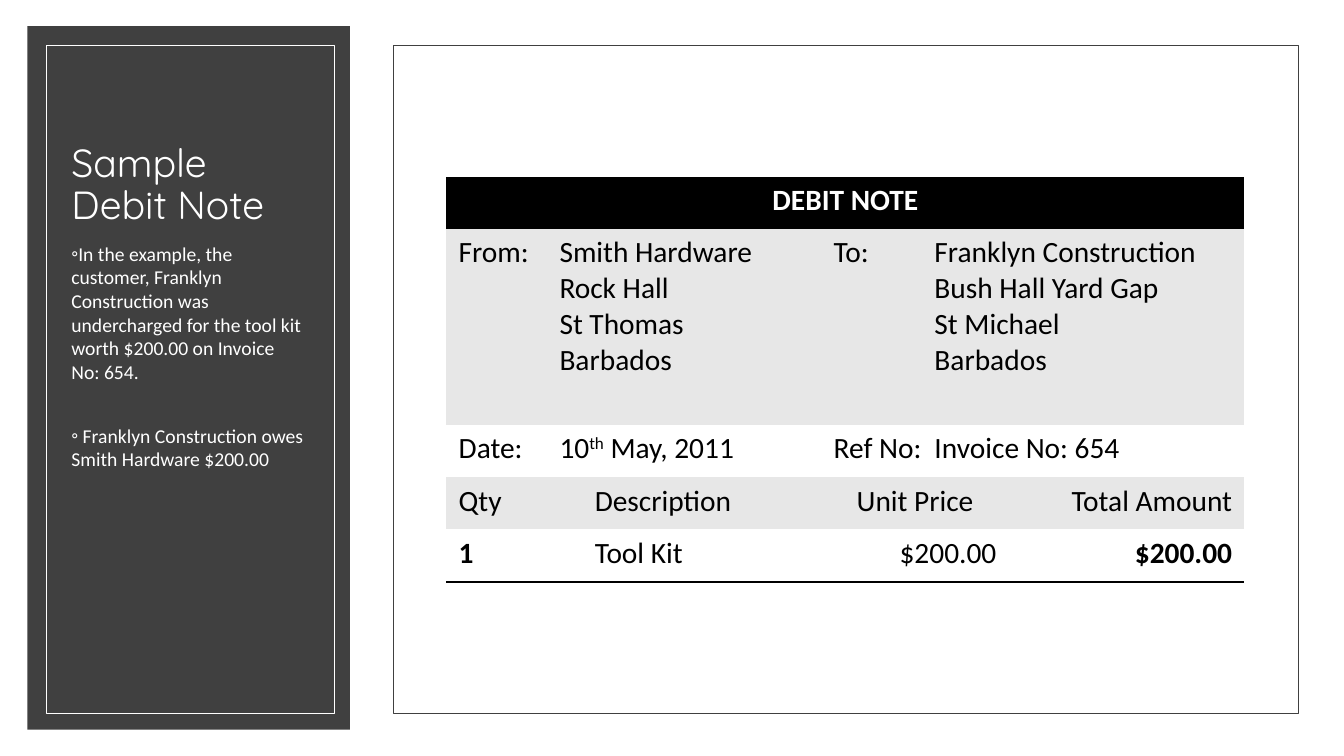
"""Build the sample debit note slide with its explanatory side panel."""
from dataclasses import dataclass

from lxml import etree
from pptx import Presentation
from pptx.dml.color import RGBColor
from pptx.enum.shapes import MSO_SHAPE
from pptx.enum.text import MSO_ANCHOR, PP_ALIGN
from pptx.oxml.ns import qn
from pptx.util import Cm, Pt

RECTANGLE = MSO_SHAPE.RECTANGLE
TOP, BOTTOM = MSO_ANCHOR.TOP, MSO_ANCHOR.BOTTOM
LEFT, CENTER, RIGHT = PP_ALIGN.LEFT, PP_ALIGN.CENTER, PP_ALIGN.RIGHT


@dataclass(frozen=True)
class Theme:
    """Colours, fonts and type sizes."""
    white: str = "FFFFFF"
    black: str = "000000"
    panel: str = "404040"
    band: str = "E7E7E7"
    title_font: str = "Quicksand"
    body_font: str = "Calibri"
    title_size: float = 28
    note_size: float = 14
    table_size: float = 21
    frame_width: float = 0.5
    rule_width: float = 2


THEME = Theme()
PLAIN_TABLE_STYLE = "{2D5ABB26-0587-4C30-8999-92F81FD0307C}"

TITLE = "Sample Debit Note"
NOTES = [
    "In the example, the customer, Franklyn Construction was undercharged "
    "for the tool kit worth $200.00 on Invoice No: 654.",
    " Franklyn Construction owes Smith Hardware $200.00",
]
COLUMN_WIDTHS = [3.43, 6.02, 4.72, 5.94]
ROW_HEIGHTS = [1.32, 4.93, 1.32, 1.32, 1.32]

# Each cell: columns spanned, alignment, bold, paragraphs of (text, style) runs.
DEBIT_NOTE = [
    [(4, CENTER, True, ["DEBIT NOTE"])],
    [(2, LEFT, False, ["From:\tSmith Hardware", "\tRock Hall", "\tSt Thomas", "\tBarbados"]),
     (2, LEFT, False, ["To:\tFranklyn Construction", "\tBush Hall Yard Gap", "\tSt Michael",
                       "\tBarbados"])],
    [(2, LEFT, False, ["Date:\t10^th^ May, 2011"]),
     (2, LEFT, False, ["Ref No:\tInvoice No: 654"])],
    [(1, LEFT, False, ["Qty"]), (1, LEFT, False, ["Description"]),
     (1, CENTER, False, ["Unit Price"]), (1, RIGHT, False, ["Total Amount"])],
    [(1, LEFT, True, ["1"]), (1, LEFT, False, ["Tool Kit"]),
     (1, RIGHT, False, ["$200.00"]), (1, RIGHT, True, ["$200.00"])],
]
ROW_FILLS = [THEME.black, THEME.band, THEME.white, THEME.band, THEME.white]

RECTANGLES = [
    ((0.69, 0.66, 8.13, 17.73), THEME.panel, None),
    ((1.17, 1.14, 7.26, 16.84), None, THEME.white),
    ((9.91, 1.14, 22.81, 16.84), None, THEME.panel),
]


def color(value):
    return RGBColor.from_string(value)


def add_rectangle(slide, box, fill, line):
    shape = slide.shapes.add_shape(RECTANGLE, *map(Cm, box))
    shape.shadow.inherit = False
    if fill:
        shape.fill.solid()
        shape.fill.fore_color.rgb = color(fill)
    else:
        shape.fill.background()
    if line:
        shape.line.color.rgb = color(line)
        shape.line.width = Pt(THEME.frame_width)
    else:
        shape.line.fill.background()


def add_run(paragraph, text, font, size, text_color, bold=False):
    run = paragraph.add_run()
    run.text = text
    run.font.name = font
    run.font.size = Pt(size)
    run.font.bold = bold
    run.font.color.rgb = color(text_color)
    return run


def add_text_frame(slide, box, anchor):
    frame = slide.shapes.add_textbox(*map(Cm, box)).text_frame
    frame.word_wrap = True
    frame.vertical_anchor = anchor
    return frame


def paragraphs_for(frame, items):
    for index, item in enumerate(items):
        yield frame.paragraphs[0] if index == 0 else frame.add_paragraph(), item


def add_bullet(paragraph):
    properties = paragraph._p.get_or_add_pPr()
    properties.set("marL", "0")
    properties.set("indent", "0")
    bullet_color = etree.SubElement(properties, qn("a:buClr"))
    etree.SubElement(bullet_color, qn("a:srgbClr"), val=THEME.white)
    etree.SubElement(properties, qn("a:buFont"), typeface=THEME.body_font)
    etree.SubElement(properties, qn("a:buChar"), char="◦")


def add_tab_stop(paragraph):
    tabs = etree.SubElement(paragraph._p.get_or_add_pPr(), qn("a:tabLst"))
    etree.SubElement(tabs, qn("a:tab"), pos=str(Cm(2.54)), algn="l")


def add_bottom_rule(cell):
    properties = cell._tc.get_or_add_tcPr()
    rule = etree.Element(qn("a:lnB"), w=str(Pt(THEME.rule_width)))
    fill = etree.SubElement(rule, qn("a:solidFill"))
    etree.SubElement(fill, qn("a:srgbClr"), val=THEME.black)
    properties.insert(0, rule)


def fill_cell(cell, fill, alignment, bold, lines):
    cell.margin_left = cell.margin_right = Cm(0.31)
    cell.margin_top = cell.margin_bottom = Cm(0.15)
    cell.fill.solid()
    cell.fill.fore_color.rgb = color(fill)
    text_color = THEME.white if fill == THEME.black else THEME.black
    for paragraph, line in paragraphs_for(cell.text_frame, lines):
        paragraph.alignment = alignment
        if "\t" in line:
            add_tab_stop(paragraph)
        for index, text in enumerate(line.split("^")):
            run = add_run(paragraph, text, THEME.body_font, THEME.table_size, text_color, bold)
            if index % 2:
                run.font._element.set("baseline", "30000")


def add_debit_note(slide):
    frame = slide.shapes.add_table(len(ROW_HEIGHTS), len(COLUMN_WIDTHS), Cm(11.25), Cm(4.45),
                                   Cm(sum(COLUMN_WIDTHS)), Cm(sum(ROW_HEIGHTS)))
    table = frame.table
    table._tbl.tblPr.find(qn("a:tableStyleId")).text = PLAIN_TABLE_STYLE
    for column, width in zip(table.columns, COLUMN_WIDTHS):
        column.width = Cm(width)
    for row, height in zip(table.rows, ROW_HEIGHTS):
        row.height = Cm(height)
    for row_index, (cells, fill) in enumerate(zip(DEBIT_NOTE, ROW_FILLS)):
        column_index = 0
        for span, alignment, bold, lines in cells:
            cell = table.cell(row_index, column_index)
            if span > 1:
                cell.merge(table.cell(row_index, column_index + span - 1))
            fill_cell(cell, fill, alignment, bold, lines)
            if row_index == len(DEBIT_NOTE) - 1:
                add_bottom_rule(cell)
            column_index += span


def main():
    presentation = Presentation()
    presentation.slide_width, presentation.slide_height = Cm(33.87), Cm(19.05)
    slide = presentation.slides.add_slide(presentation.slide_layouts[6])
    slide.background.fill.solid()
    slide.background.fill.fore_color.rgb = color(THEME.white)
    for box, fill, line in RECTANGLES:
        add_rectangle(slide, box, fill, line)

    title = add_text_frame(slide, (1.55, 1.7, 6.43, 4.17), BOTTOM).paragraphs[0]
    title.line_spacing = 0.9
    add_run(title, TITLE, THEME.title_font, THEME.title_size, THEME.white)

    notes = add_text_frame(slide, (1.55, 5.97, 6.43, 10.72), TOP)
    for index, (paragraph, text) in enumerate(paragraphs_for(notes, NOTES)):
        add_bullet(paragraph)
        paragraph.space_before = Pt(23 if index else 0)
        paragraph.space_after = Pt(6)
        add_run(paragraph, text, THEME.body_font, THEME.note_size, THEME.white)

    add_debit_note(slide)
    presentation.save("out.pptx")


if __name__ == "__main__":
    main()
